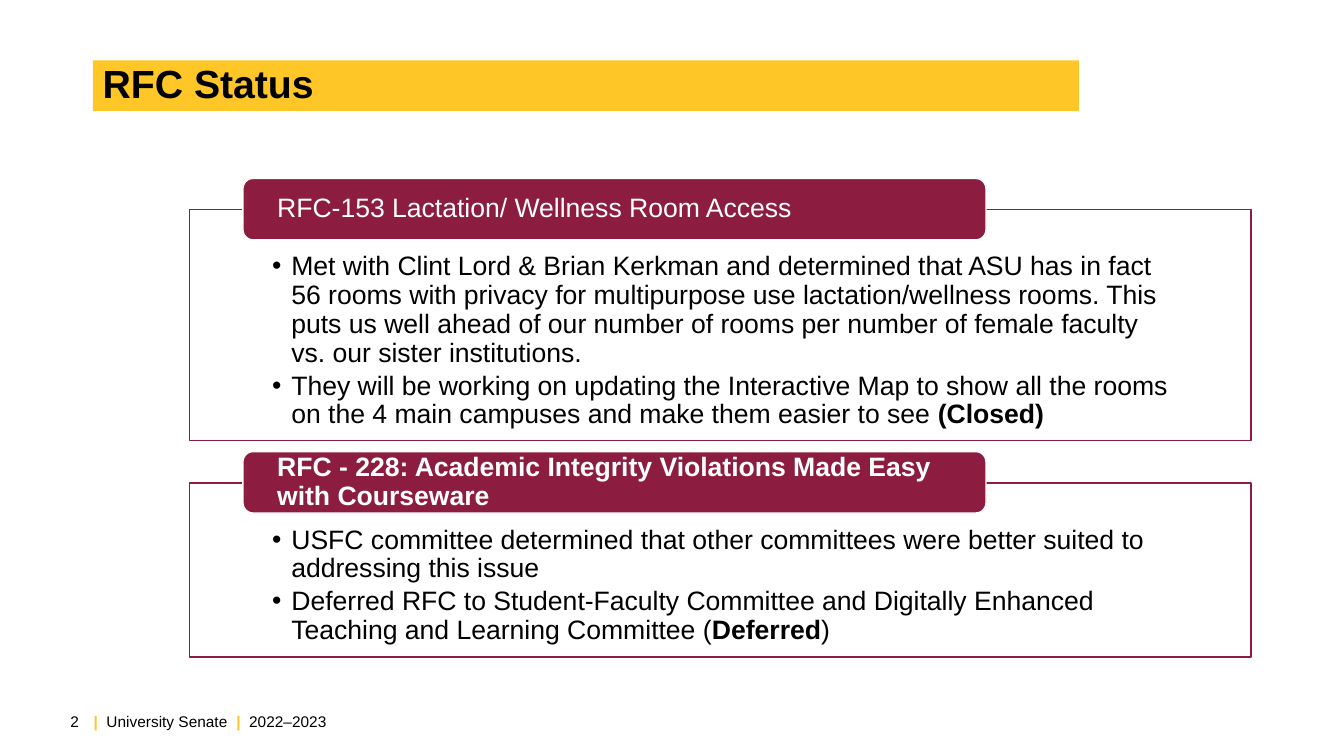
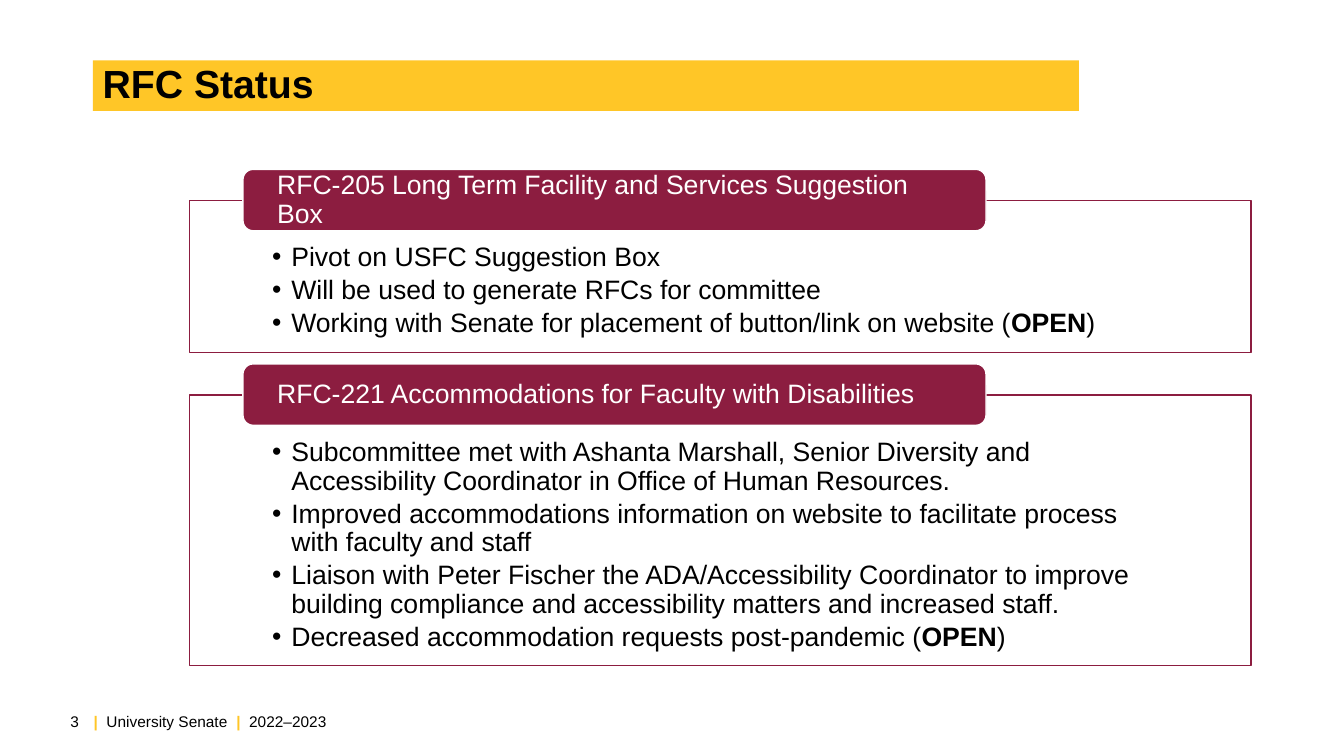
from lxml import etree
from pptx import Presentation
from pptx.dml.color import RGBColor
from pptx.enum.shapes import MSO_SHAPE
from pptx.enum.text import MSO_ANCHOR, PP_ALIGN
from pptx.oxml.ns import qn
from pptx.util import Pt

PX = 9144  # EMU per px, 100 px to the inch
RECT, ROUND = MSO_SHAPE.RECTANGLE, MSO_SHAPE.ROUNDED_RECTANGLE
TOP, MIDDLE = MSO_ANCHOR.TOP, MSO_ANCHOR.MIDDLE
LEFT, RIGHT = PP_ALIGN.LEFT, PP_ALIGN.RIGHT

FONT = "Arial"
GOLD, MAROON, BLACK, WHITE = "FFC627", "8C1D40", "000000", "FFFFFF"
BODY, TITLE, SMALL = 19, 28, 11
INSETS = (10, 5, 10, 5)
CARD_X, CARD_W, CARD_GAP = 188, 1053, 42
TAB_X, TAB_W, TAB_H, TAB_RISE = 241, 737, 61, 31
HANG = 19

# Each slide: top of the first card, then (height, heading, heading bold, bullets).
# A bullet is a list of (text, bold) runs.
SLIDES = [
    (208, [
        (229, "RFC-153 Lactation/ Wellness Room Access", False, [
            [("Met with Clint Lord & Brian Kerkman and determined that ASU has in "
              "fact 56 rooms with privacy for multipurpose use lactation/wellness "
              "rooms. This puts us well ahead of our number of rooms per number of "
              "female faculty vs. our sister institutions.", False)],
            [("They will be working on updating the Interactive Map to show all the "
              "rooms on the 4 main campuses and make them easier to see ", False),
             ("(Closed)", True)],
        ]),
        (173, "RFC - 228: Academic Integrity Violations Made Easy with Courseware",
         True, [
            [("USFC committee determined that other committees were better suited "
              "to addressing this issue", False)],
            [("Deferred RFC to Student-Faculty Committee and Digitally Enhanced "
              "Teaching and Learning Committee (", False),
             ("Deferred", True), (")", False)],
         ]),
    ]),
    (199, [
        (151, "RFC-205 Long Term Facility and Services Suggestion Box", False, [
            [("Pivot on USFC Suggestion Box", False)],
            [("Will be used to generate RFCs for committee", False)],
            [("Working with Senate for placement of button/link on website (", False),
             ("OPEN", True), (")", False)],
        ]),
        (268, "RFC-221 Accommodations for Faculty with Disabilities", False, [
            [("Subcommittee met with Ashanta Marshall, Senior Diversity and "
              "Accessibility Coordinator in Office of Human Resources.", False)],
            [("Improved accommodations information on website to facilitate "
              "process with faculty and staff", False)],
            [("Liaison with Peter Fischer the ADA/Accessibility Coordinator to "
              "improve building compliance and accessibility matters and "
              "increased staff.", False)],
            [("Decreased accommodation requests post-pandemic (", False),
             ("OPEN", True), (")", False)],
        ]),
    ]),
]


def color(code):
    return RGBColor.from_string(code)


def box(*place):
    return [n * PX for n in place]


def set_frame(shape, anchor, insets=INSETS):
    frame = shape.text_frame
    frame.word_wrap = True
    frame.vertical_anchor = anchor
    (frame.margin_left, frame.margin_top,
     frame.margin_right, frame.margin_bottom) = box(*insets)
    return frame


def add_panel(slide, kind, place, fill, line=None):
    shape = slide.shapes.add_shape(kind, *box(*place))
    shape.shadow.inherit = False
    shape.fill.solid()
    shape.fill.fore_color.rgb = color(fill)
    if line:
        shape.line.color.rgb = color(line)
        shape.line.width = Pt(1)
    else:
        shape.line.fill.background()
    return shape


def add_run(para, text, size, tint=BLACK, bold=False):
    run = para.add_run()
    run.text = text
    font = run.font
    font.name, font.size, font.bold = FONT, Pt(size), bold
    font.color.rgb = color(tint)


def set_para(para, spacing=None, align=LEFT):
    para.alignment = align
    if spacing:
        para.line_spacing = spacing


def set_bullet(para):
    props = para._p.get_or_add_pPr()
    props.set("marL", str(HANG * PX))
    props.set("indent", str(-HANG * PX))
    etree.SubElement(props, qn("a:buFont")).set("typeface", FONT)
    etree.SubElement(props, qn("a:buChar")).set("char", "•")


def add_title(slide, text):
    band = add_panel(slide, RECT, (92, 60, 978, 50), GOLD)
    para = set_frame(band, MIDDLE).paragraphs[0]
    set_para(para, Pt(30))
    add_run(para, text, TITLE, bold=True)


def add_label(slide, place, runs, align=LEFT):
    """Add a small footer text from (text, colour, bold) runs."""
    label = slide.shapes.add_textbox(*box(*place))
    para = set_frame(label, MIDDLE).paragraphs[0]
    set_para(para, align=align)
    for text, tint, bold in runs:
        add_run(para, text, SMALL, tint, bold)


def add_footer(slide, number):
    bar = ("|", GOLD, True)
    add_label(slide, (83, 696, 509, 40), [
        bar, ("  University Senate  ", BLACK, False),
        bar, ("  2022–2023", BLACK, False)])
    add_label(slide, (39, 696, 49, 40), [(str(number), BLACK, False)], RIGHT)


def add_card(slide, top, height, heading, bold, items):
    """Add an outlined list with a heading tab across its top edge."""
    panel = add_panel(slide, RECT, (CARD_X, top, CARD_W, height), WHITE, MAROON)
    frame = set_frame(panel, TOP, (82, 43, 82, 15))
    for i, runs in enumerate(items):
        para = frame.add_paragraph() if i else frame.paragraphs[0]
        set_para(para, 0.9)
        para.space_after = Pt(3)
        set_bullet(para)
        for text, strong in runs:
            add_run(para, text, BODY, bold=strong)

    tab = add_panel(slide, ROUND, (TAB_X, top - TAB_RISE, TAB_W, TAB_H),
                    MAROON, WHITE)
    para = set_frame(tab, MIDDLE, (31, 0, 31, 0)).paragraphs[0]
    set_para(para, 0.9)
    add_run(para, heading, BODY, WHITE, bold)


def main():
    deck = Presentation()
    deck.slide_width, deck.slide_height = box(1333, 750)
    blank = deck.slide_layouts[6]
    for number, (top, cards) in enumerate(SLIDES, 2):
        slide = deck.slides.add_slide(blank)
        add_title(slide, "RFC Status")
        add_footer(slide, number)
        for height, heading, bold, items in cards:
            add_card(slide, top, height, heading, bold, items)
            top += height + CARD_GAP
    deck.save("out.pptx")


if __name__ == "__main__":
    main()
